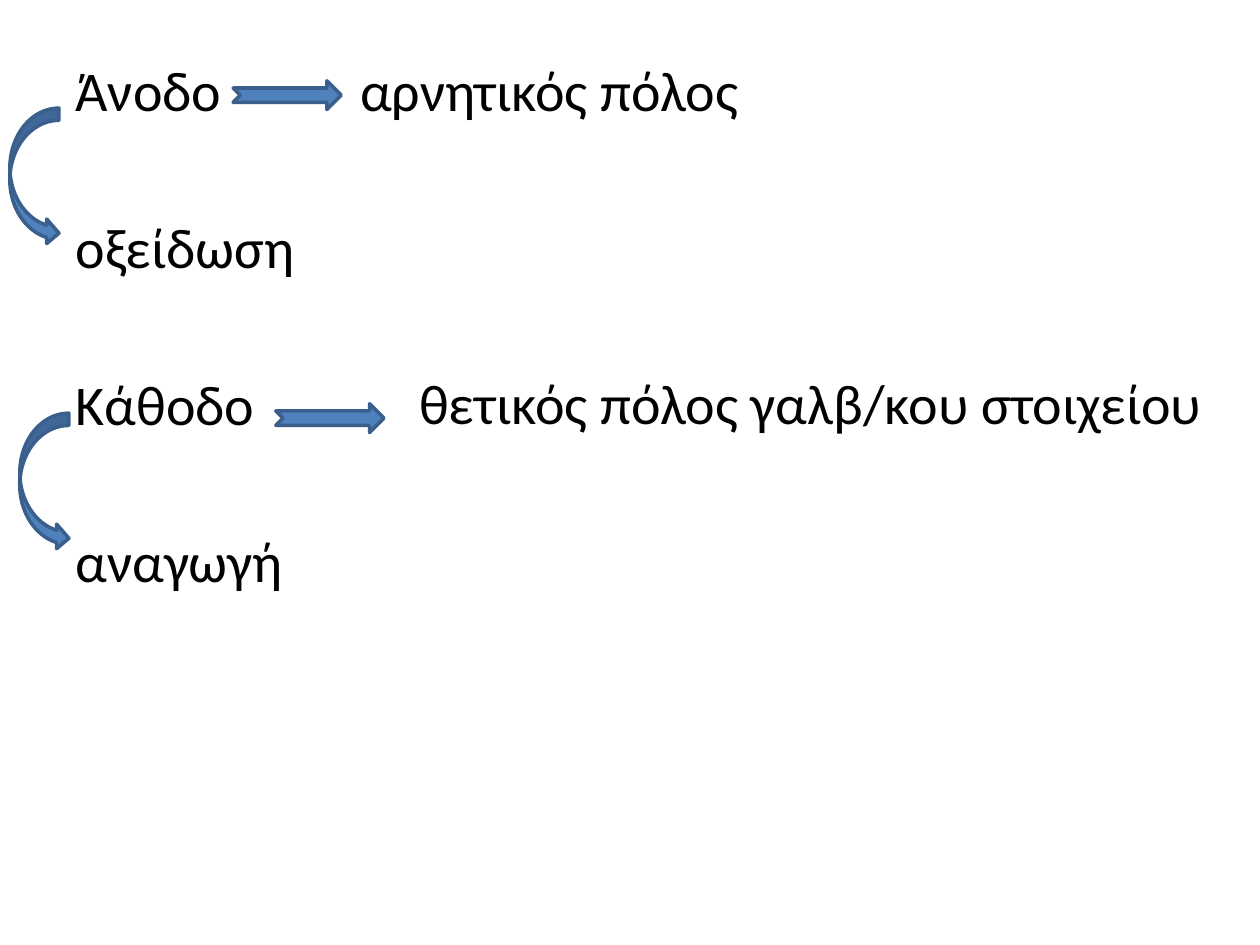
from lxml.etree import SubElement
from pptx import Presentation
from pptx.dml.color import RGBColor
from pptx.enum.shapes import MSO_SHAPE
from pptx.enum.text import MSO_ANCHOR, MSO_AUTO_SIZE
from pptx.oxml.ns import qn
from pptx.util import Cm, Pt

COLORS = {"text": "000000", "arrow": "4F81BD", "outline": "3A5F8C"}


def format_text(para):
    para.font.name = "Calibri"
    para.font.size = Pt(32)
    para.font.color.rgb = RGBColor.from_string(COLORS["text"])


deck = Presentation()
deck.slide_width, deck.slide_height = Cm(25.4), Cm(19.05)
page = deck.slides.add_slide(deck.slide_layouts[1])
title = page.shapes.title
title.element.getparent().remove(title.element)

# Electrodes, each followed by the reaction that takes place there
body = page.placeholders[1]
body.left, body.top, body.width, body.height = Cm(1.27), Cm(0.99), Cm(24.13), Cm(16.03)
frame = body.text_frame
frame.word_wrap = True
frame.auto_size = MSO_AUTO_SIZE.NONE
frame.vertical_anchor = MSO_ANCHOR.TOP
for index, wording in enumerate(["Άνοδο", "οξείδωση", "Κάθοδο", "αναγωγή"]):
    para = frame.paragraphs[0] if index == 0 else frame.add_paragraph()
    para.text = wording
    properties = para._p.get_or_add_pPr()
    properties.set("marL", "0")
    properties.set("indent", "0")
    SubElement(properties, qn("a:buNone"))
    para.space_before = Pt(51.4 if index else 0)
    format_text(para)

# Pole of each electrode, on the same line as its name
poles = [
    ("αρνητικός πόλος", Cm(7.26), Cm(1.12)),
    ("θετικός πόλος γαλβ/κου στοιχείου", Cm(8.45), Cm(7.43)),
]
for wording, left, top in poles:
    box = page.shapes.add_textbox(left, top, Cm(16.9), Cm(1.4))
    label = box.text_frame
    label.word_wrap = True
    label.margin_left = label.margin_right = label.margin_top = label.margin_bottom = 0
    label.text = wording
    format_text(label.paragraphs[0])

reaction_size = (Cm(0.99), Cm(2.77))
pole_size = (Cm(2.18), Cm(0.58))
arrows = [
    (MSO_SHAPE.CURVED_RIGHT_ARROW, Cm(0.2), Cm(2.18), reaction_size),
    (MSO_SHAPE.CURVED_RIGHT_ARROW, Cm(0.4), Cm(8.33), reaction_size),
    (MSO_SHAPE.NOTCHED_RIGHT_ARROW, Cm(4.7), Cm(1.63), pole_size),
    (MSO_SHAPE.NOTCHED_RIGHT_ARROW, Cm(5.56), Cm(8.14), pole_size),
]
for kind, left, top, size in arrows:
    arrow = page.shapes.add_shape(kind, left, top, *size)
    arrow.shadow.inherit = False
    arrow.fill.solid()
    arrow.fill.fore_color.rgb = RGBColor.from_string(COLORS["arrow"])
    arrow.line.color.rgb = RGBColor.from_string(COLORS["outline"])
    arrow.line.width = Pt(2)

deck.save("out.pptx")
